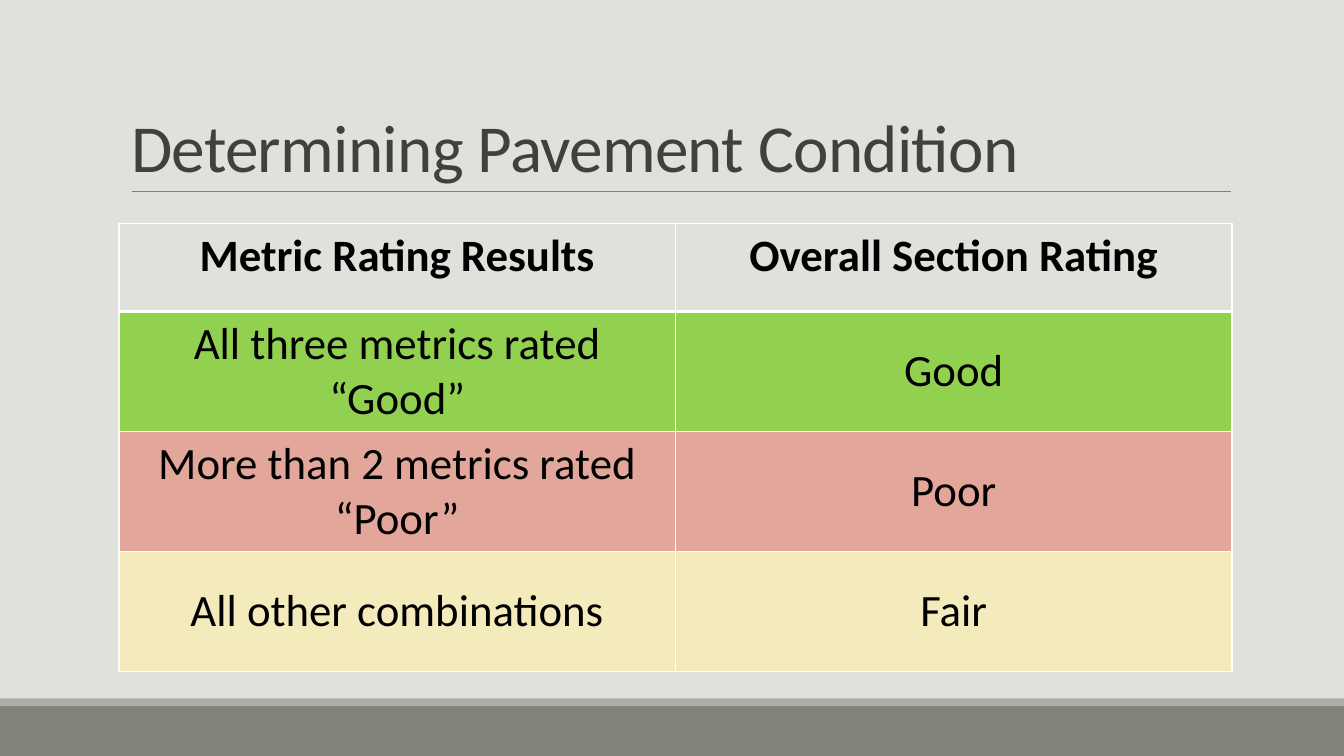
from dataclasses import dataclass

from lxml import etree
from pptx import Presentation
from pptx.dml.color import RGBColor
from pptx.enum.shapes import MSO_CONNECTOR, MSO_SHAPE
from pptx.enum.text import MSO_ANCHOR, MSO_AUTO_SIZE, PP_ALIGN
from pptx.oxml.ns import qn
from pptx.util import Inches, Pt

RECTANGLE = MSO_SHAPE.RECTANGLE
STRAIGHT = MSO_CONNECTOR.STRAIGHT
TOP, MIDDLE, BOTTOM = MSO_ANCHOR.TOP, MSO_ANCHOR.MIDDLE, MSO_ANCHOR.BOTTOM
LEFT, CENTER = PP_ALIGN.LEFT, PP_ALIGN.CENTER
NO_AUTOFIT = MSO_AUTO_SIZE.NONE
TITLE_ONLY = 5
SLIDE_WIDTH, SLIDE_HEIGHT = 13.33, 7.5


@dataclass(frozen=True)
class Theme:
    font: str = "Calibri"
    title_size: int = 48
    table_size: int = 32
    background: str = "E1E1DB"
    title: str = "404040"
    text: str = "000000"
    rule: str = "808080"
    border: str = "FFFFFF"
    good: str = "92D050"
    poor: str = "E2A69A"
    fair: str = "F4EBBD"


@dataclass(frozen=True)
class Band:
    top: float
    height: float
    color: str


@dataclass(frozen=True)
class RatingRow:
    metrics: str
    rating: str
    height: float = 1.19
    fill: str | None = None
    bold: bool = False
    anchor: MSO_ANCHOR = MIDDLE
    top_border: int = 1
    bottom_border: int = 1


THEME = Theme()
BANDS = [Band(7, 0.5, "82847C"), Band(6.93, 0.07, "ACADA8")]
ROWS = [
    RatingRow("Metric Rating Results", "Overall Section Rating", height=0.87,
              bold=True, anchor=TOP, bottom_border=3),
    RatingRow("All three metrics rated “Good”", "Good", fill=THEME.good, top_border=3),
    RatingRow("More than 2 metrics rated “Poor”", "Poor", fill=THEME.poor),
    RatingRow("All other combinations", "Fair", fill=THEME.fair),
]


def apply(target, values: dict) -> None:
    for name, value in values.items():
        setattr(target, name, value)


def color(code: str) -> RGBColor:
    return RGBColor.from_string(code)


def write(text_frame, text: str, size: int, text_color: str, bold: bool, alignment):
    paragraph = text_frame.paragraphs[0]
    paragraph.alignment = alignment
    run = paragraph.add_run()
    run.text = text
    apply(run.font, {"name": THEME.font, "size": Pt(size), "bold": bold})
    run.font.color.rgb = color(text_color)
    return paragraph


def add_band(slide, band: Band) -> None:
    shape = slide.shapes.add_shape(RECTANGLE, 0, Inches(band.top),
                                   Inches(SLIDE_WIDTH), Inches(band.height))
    shape.shadow.inherit = False
    shape.fill.solid()
    shape.fill.fore_color.rgb = color(band.color)
    shape.line.fill.background()


def add_title_rule(slide) -> None:
    rule = slide.shapes.add_connector(STRAIGHT, Inches(1.31), Inches(1.9),
                                      Inches(12.21), Inches(1.9))
    rule.line.color.rgb = color(THEME.rule)
    rule.line.width = Pt(0.5)
    etree.SubElement(rule._element.spPr, qn("a:effectLst"))


def format_title(slide, text: str) -> None:
    title = slide.shapes.title
    apply(title, {"left": Inches(1.2), "top": Inches(0.31),
                  "width": Inches(11), "height": Inches(1.59)})
    apply(title.text_frame, {"vertical_anchor": BOTTOM, "word_wrap": True,
                             "auto_size": NO_AUTOFIT})
    paragraph = write(title.text_frame, text, THEME.title_size, THEME.title, False, LEFT)
    paragraph.line_spacing = 0.85
    paragraph.runs[0].font._element.set("spc", "-50")


def add_borders(cell, row: RatingRow) -> None:
    properties = cell._tc.get_or_add_tcPr()
    widths = {"L": 1, "R": 1, "T": row.top_border, "B": row.bottom_border}
    for side, width in widths.items():
        border = etree.SubElement(properties, qn(f"a:ln{side}"), w=str(Pt(width)))
        fill = etree.SubElement(border, qn("a:solidFill"))
        etree.SubElement(fill, qn("a:srgbClr"), val=THEME.border)


def fill_cell(cell, text: str, row: RatingRow) -> None:
    cell.vertical_anchor = row.anchor
    write(cell.text_frame, text, THEME.table_size, THEME.text, row.bold, CENTER)
    add_borders(cell, row)
    if row.fill:
        cell.fill.solid()
        cell.fill.fore_color.rgb = color(row.fill)
    else:
        cell.fill.background()


def add_rating_table(slide) -> None:
    height = sum(row.height for row in ROWS)
    table = slide.shapes.add_table(len(ROWS), 2, Inches(1.18), Inches(2.22),
                                   Inches(11.04), Inches(height)).table
    apply(table, {"first_row": False, "horz_banding": False})
    for table_row, row in zip(table.rows, ROWS):
        table_row.height = Inches(row.height)
        for cell, text in zip(table_row.cells, (row.metrics, row.rating)):
            fill_cell(cell, text, row)


def main() -> None:
    presentation = Presentation()
    apply(presentation, {"slide_width": Inches(SLIDE_WIDTH),
                         "slide_height": Inches(SLIDE_HEIGHT)})
    slide = presentation.slides.add_slide(presentation.slide_layouts[TITLE_ONLY])
    slide.background.fill.solid()
    slide.background.fill.fore_color.rgb = color(THEME.background)
    for band in BANDS:
        add_band(slide, band)
    add_title_rule(slide)
    format_title(slide, "Determining Pavement Condition")
    add_rating_table(slide)
    presentation.save("out.pptx")


if __name__ == "__main__":
    main()
